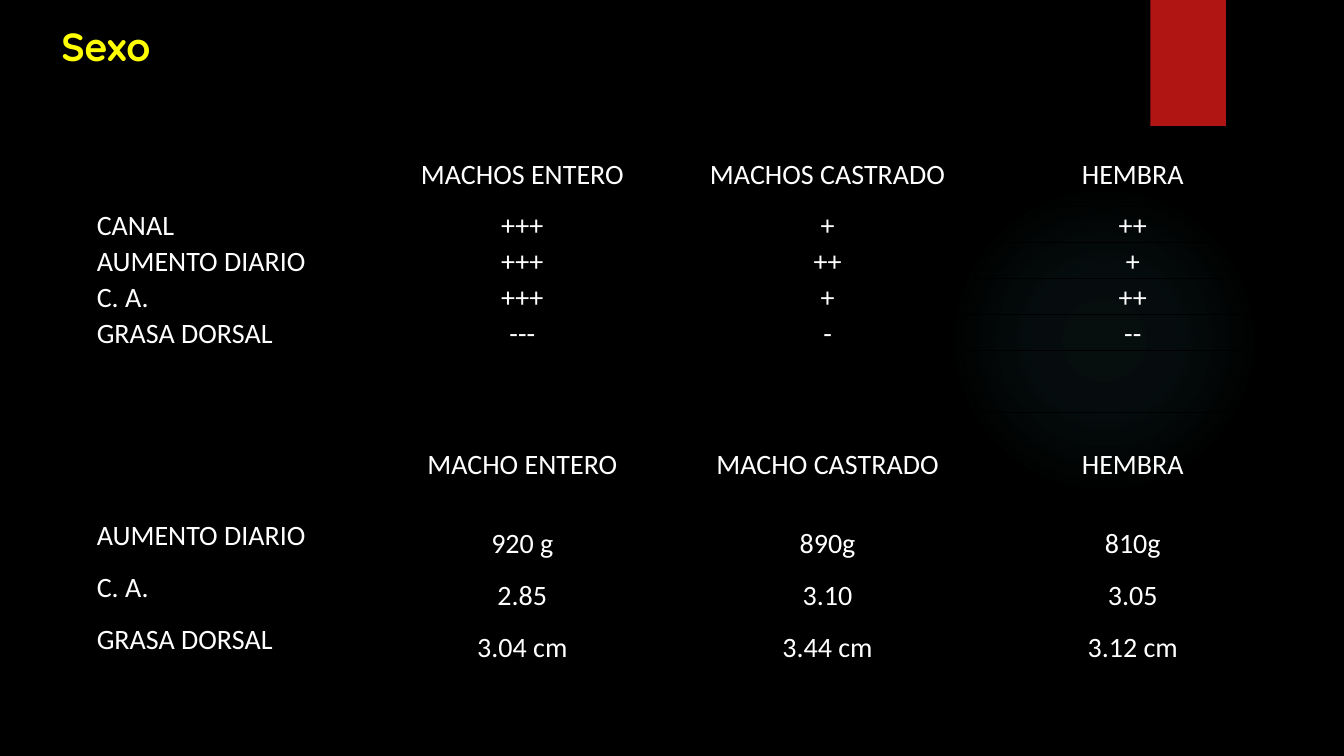
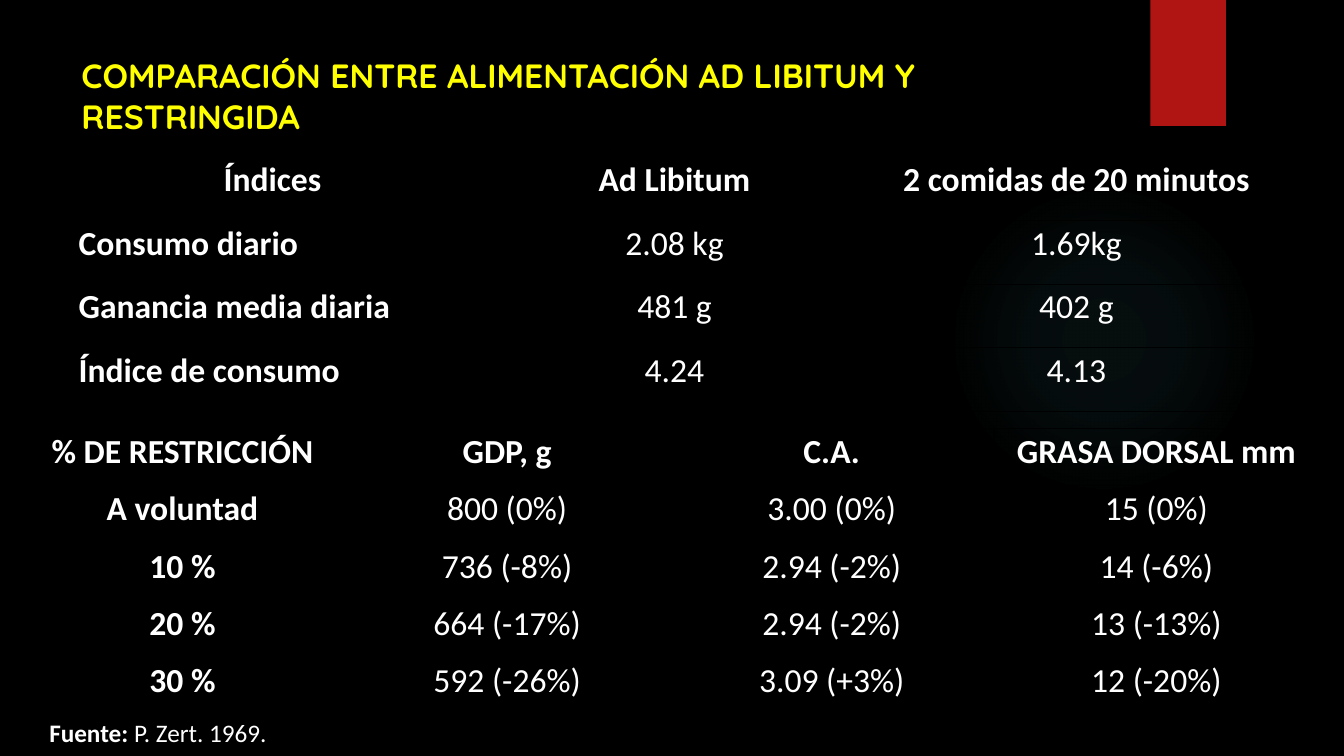
from dataclasses import dataclass

from lxml.etree import SubElement
from pptx import Presentation
from pptx.dml.color import RGBColor
from pptx.enum.shapes import MSO_SHAPE
from pptx.enum.text import MSO_ANCHOR, MSO_AUTO_SIZE, PP_ALIGN
from pptx.oxml import parse_xml
from pptx.oxml.ns import nsdecls, qn
from pptx.slide import Slide
from pptx.table import _Cell
from pptx.text.text import TextFrame, _Paragraph
from pptx.util import Inches, Pt


@dataclass(frozen=True)
class Theme:
    background: str = "000000"
    text: str = "FFFFFF"
    title: str = "FFFF00"
    band: str = "B01513"
    glow: str = "50B9C1"
    border: str = "000000"
    title_font: str = "Quicksand"
    body_font: str = "Calibri"
    title_size: int = 28
    long_title_size: int = 24
    table_size: int = 24
    small_table_size: int = 20
    source_size: int = 18
    line_spacing: float = 1.07


THEME = Theme()


@dataclass(frozen=True)
class Box:
    left: float
    top: float
    width: float
    height: float

    def emu(self) -> tuple[int, int, int, int]:
        return (Inches(self.left), Inches(self.top),
                Inches(self.width), Inches(self.height))


@dataclass(frozen=True)
class TableStyle:
    size: int
    bold_heads: bool
    indent: float = 0
    anchor: MSO_ANCHOR = MSO_ANCHOR.TOP
    label_anchor: MSO_ANCHOR = MSO_ANCHOR.TOP
    label_align: PP_ALIGN = PP_ALIGN.LEFT


@dataclass(frozen=True)
class DataTable:
    left: float
    top: float
    width: float
    head_height: float
    row_height: float
    style: TableStyle
    rows: list[list[str]]


@dataclass(frozen=True)
class Page:
    title: str
    title_box: Box
    title_size: int
    tables: list[DataTable]
    source: tuple[str, str] | None = None


SEX_SCORES = TableStyle(THEME.small_table_size, False, 0.5,
                        MSO_ANCHOR.MIDDLE, MSO_ANCHOR.MIDDLE)
SEX_VALUES = TableStyle(THEME.small_table_size, False, 0.5,
                        MSO_ANCHOR.MIDDLE, label_align=PP_ALIGN.JUSTIFY)
FEEDING = TableStyle(THEME.table_size, True)
RESTRICTION = TableStyle(THEME.table_size, True, label_align=PP_ALIGN.CENTER)

PAGES = [
    Page("Sexo", Box(0.51, 0.17, 10.29, 0.91), THEME.title_size, [
        DataTable(0.39, 1.4, 12.11, 0.65, 0.33, SEX_SCORES, [
            ["", "MACHOS ENTERO", "MACHOS CASTRADO", "HEMBRA"],
            ["CANAL", "+++", "+", "++"],
            ["AUMENTO DIARIO", "+++", "++", "+"],
            ["C. A.", "+++", "+", "++"],
            ["GRASA DORSAL", "---", "-", "--"],
        ]),
        DataTable(0.39, 4.09, 12.11, 1.03, 0.52, SEX_VALUES, [
            ["", "MACHO ENTERO", "MACHO CASTRADO", "HEMBRA"],
            ["AUMENTO DIARIO", "920 g", "890g", "810g"],
            ["C. A.", "2.85", "3.10", "3.05"],
            ["GRASA DORSAL", "3.04 cm", "3.44 cm", "3.12 cm"],
        ]),
    ]),
    Page("COMPARACIÓN ENTRE ALIMENTACIÓN AD LIBITUM Y RESTRINGIDA",
         Box(0.71, 0.5, 10.29, 1.07), THEME.long_title_size, [
             DataTable(0.71, 1.56, 11.96, 0.63, 0.63, FEEDING, [
                 ["Índices", "Ad Libitum", "2 comidas de 20 minutos"],
                 ["Consumo diario", "2.08 kg", "1.69kg"],
                 ["Ganancia media diaria", "481 g", "402 g"],
                 ["Índice de consumo", "4.24", "4.13"],
             ]),
             DataTable(0.2, 4.25, 12.88, 0.57, 0.57, RESTRICTION, [
                 ["% DE RESTRICCIÓN", "GDP, g", "C.A.", "GRASA DORSAL mm"],
                 ["A voluntad", "800 (0%)", "3.00 (0%)", "15 (0%)"],
                 ["10 %", "736 (-8%)", "2.94 (-2%)", "14 (-6%)"],
                 ["20 %", "664 (-17%)", "2.94 (-2%)", "13 (-13%)"],
                 ["30 %", "592 (-26%)", "3.09 (+3%)", "12 (-20%)"],
             ]),
         ], ("Fuente: ", "P. Zert. 1969.")),
]


def add_run(p: _Paragraph, text: str, size: int, bold: bool,
            font: str = THEME.body_font, color: str = THEME.text) -> None:
    r = p.add_run()
    r.text = text
    r.font.size = Pt(size)
    r.font.bold = bold
    r.font.name = font
    r.font.color.rgb = RGBColor.from_string(color)


def add_text_box(s: Slide, box: Box, wrap: bool) -> TextFrame:
    tf = s.shapes.add_textbox(*box.emu()).text_frame
    tf.word_wrap = wrap
    return tf


def add_plain_shape(s: Slide, kind: MSO_SHAPE, box: Box, color: str):
    sp = s.shapes.add_shape(kind, *box.emu())
    sp.shadow.inherit = False
    sp.fill.solid()
    sp.fill.fore_color.rgb = RGBColor.from_string(color)
    sp.line.fill.background()
    return sp


def add_backdrop(s: Slide) -> None:
    """Draw the dark background, the faint glow and the red band."""
    s.background.fill.solid()
    s.background.fill.fore_color.rgb = RGBColor.from_string(THEME.background)
    glow = add_plain_shape(s, MSO_SHAPE.OVAL, Box(9.41, 1.83, 3.08, 3.08), THEME.glow)
    stops = "".join(
        f'<a:gs pos="{pos * 1000}"><a:srgbClr val="{THEME.glow}">'
        f'<a:alpha val="{alpha * 1000}"/></a:srgbClr></a:gs>'
        for pos, alpha in ((0, 7), (36, 6), (69, 0)))
    gradient = parse_xml(
        f'<a:gradFill {nsdecls("a")}><a:gsLst>{stops}</a:gsLst><a:path path="circle">'
        '<a:fillToRect l="50000" t="50000" r="50000" b="50000"/></a:path></a:gradFill>')
    solid = glow._element.spPr.find(qn("a:solidFill"))
    solid.getparent().replace(solid, gradient)
    add_plain_shape(s, MSO_SHAPE.RECTANGLE, Box(11.41, 0, 0.75, 1.25), THEME.band)


def set_borders(cell: _Cell) -> None:
    tc_pr = cell._tc.get_or_add_tcPr()
    for i, side in enumerate(("lnL", "lnR", "lnT", "lnB")):
        ln = SubElement(tc_pr, qn(f"a:{side}"), w=str(Pt(1)))
        fill = SubElement(ln, qn("a:solidFill"))
        SubElement(fill, qn("a:srgbClr"), val=THEME.border)
        tc_pr.insert(i, ln)


def fill_cell(cell: _Cell, text: str, style: TableStyle,
              is_head: bool, is_label: bool) -> None:
    cell.fill.background()
    set_borders(cell)
    cell.margin_left = cell.margin_right = Inches(0.07)
    cell.margin_top = cell.margin_bottom = 0
    is_row_label = is_label and not is_head
    cell.vertical_anchor = style.label_anchor if is_row_label else style.anchor
    if not text:
        return
    p = cell.text_frame.paragraphs[0]
    p.alignment = style.label_align if is_row_label else PP_ALIGN.CENTER
    p.line_spacing = THEME.line_spacing
    p._p.get_or_add_pPr().set("marL", str(Inches(style.indent)))
    add_run(p, text, style.size, style.bold_heads and (is_head or is_label))


def add_data_table(s: Slide, data: DataTable) -> None:
    n_rows, n_cols = len(data.rows), len(data.rows[0])
    height = data.head_height + data.row_height * (n_rows - 1)
    box = Box(data.left, data.top, data.width, height)
    table = s.shapes.add_table(n_rows, n_cols, *box.emu()).table
    table.first_row = table.horz_banding = False
    for column in table.columns:
        column.width = Inches(data.width / n_cols)
    for i, row in enumerate(data.rows):
        table.rows[i].height = Inches(data.row_height if i else data.head_height)
        for j, text in enumerate(row):
            fill_cell(table.cell(i, j), text, data.style, i == 0, j == 0)


def add_page(prs: Presentation, page: Page) -> None:
    s = prs.slides.add_slide(prs.slide_layouts[6])
    add_backdrop(s)
    tf = add_text_box(s, page.title_box, True)
    add_run(tf.paragraphs[0], page.title, page.title_size, True,
            THEME.title_font, THEME.title)
    for data in page.tables:
        add_data_table(s, data)
    if page.source:
        tf = add_text_box(s, Box(0.39, 7.07, 2.38, 0.4), False)
        tf.auto_size = MSO_AUTO_SIZE.SHAPE_TO_FIT_TEXT
        label, reference = page.source
        add_run(tf.paragraphs[0], label, THEME.source_size, True)
        add_run(tf.paragraphs[0], reference, THEME.source_size, False)


def main() -> None:
    prs = Presentation()
    prs.slide_width, prs.slide_height = Inches(13.33), Inches(7.5)
    for page in PAGES:
        add_page(prs, page)
    prs.save("out.pptx")


if __name__ == "__main__":
    main()
